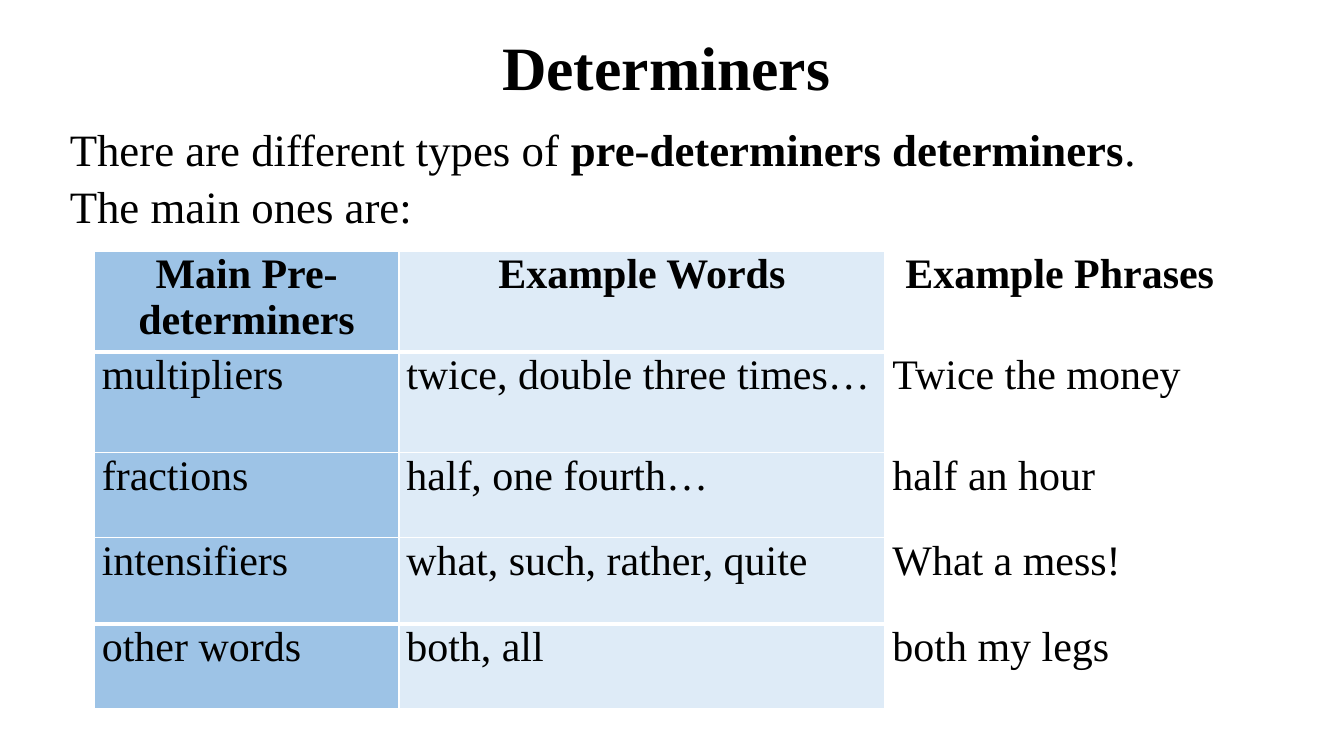
"""Build the Determiners slide with its table of pre-determiners."""
from lxml.etree import SubElement
from pptx import Presentation
from pptx.dml.color import RGBColor
from pptx.enum.text import MSO_ANCHOR, PP_ALIGN
from pptx.oxml.ns import qn
from pptx.util import Pt

PX = 9525
FONT = "Times New Roman"
BLACK = RGBColor(0x00, 0x00, 0x00)
WHITE = RGBColor(0xFF, 0xFF, 0xFF)
BLUE = RGBColor(0x9D, 0xC3, 0xE6)
PALE_BLUE = RGBColor(0xDE, 0xEB, 0xF7)

ROWS = [
    ("Main Pre-determiners", "Example Words", "Example Phrases"),
    ("multipliers", "twice, double three times…", "Twice the money"),
    ("fractions", "half, one fourth…", "half an hour"),
    ("intensifiers", "what, such, rather, quite", "What a mess!"),
    ("other words", "both, all", "both my legs"),
]
COL_WIDTHS = [290, 463, 333]
ROW_HEIGHTS = [96, 96, 81, 82, 81]
COL_FILLS = [BLUE, PALE_BLUE, None]


def add_run(p, text, size, bold=False):
    r = p.add_run()
    r.text = text
    r.font.name = FONT
    r.font.size = Pt(size)
    r.font.bold = bold
    r.font.color.rgb = BLACK


def add_border(cell, side, width):
    ln = SubElement(cell._tc.get_or_add_tcPr(), qn(f"a:{side}"), w=str(Pt(width)))
    fill = SubElement(ln, qn("a:solidFill"))
    SubElement(fill, qn("a:srgbClr"), val=str(WHITE))


prs = Presentation()
prs.slide_width = 1280 * PX
prs.slide_height = 720 * PX
s = prs.slides.add_slide(prs.slide_layouts[6])

tf = s.shapes.add_textbox(90 * PX, 26 * PX, 1104 * PX, 83 * PX).text_frame
tf.word_wrap = True
tf.vertical_anchor = MSO_ANCHOR.MIDDLE
p = tf.paragraphs[0]
p.alignment = PP_ALIGN.CENTER
p.line_spacing = 0.9
add_run(p, "Determiners ", 44, True)

tf = s.shapes.add_textbox(57 * PX, 109 * PX, 1159 * PX, 113 * PX).text_frame
tf.word_wrap = True
p = tf.paragraphs[0]
p.line_spacing = 1.05
add_run(p, "There are different types of ", 32)
add_run(p, "pre-determiners determiners", 32, True)
add_run(p, ".", 32)
p = tf.add_paragraph()
p.line_spacing = 1.05
add_run(p, "The main ones are:", 32)

table = s.shapes.add_table(
    len(ROWS), len(COL_WIDTHS), 90 * PX, 239 * PX,
    sum(COL_WIDTHS) * PX, sum(ROW_HEIGHTS) * PX).table
table.horz_banding = False
for col, width in zip(table.columns, COL_WIDTHS):
    col.width = width * PX
for row, height in zip(table.rows, ROW_HEIGHTS):
    row.height = height * PX

last = len(ROWS) - 1
for i, texts in enumerate(ROWS):
    for j, text in enumerate(texts):
        cell = table.cell(i, j)
        cell.margin_left = cell.margin_right = 7 * PX
        cell.margin_top = cell.margin_bottom = 0
        add_border(cell, "lnL", 1)
        add_border(cell, "lnR", 1)
        add_border(cell, "lnT", 3 if i in (1, last) else 1)
        add_border(cell, "lnB", 3 if i in (0, last - 1) else 1)
        if COL_FILLS[j] is None:
            cell.fill.background()
        else:
            cell.fill.solid()
            cell.fill.fore_color.rgb = COL_FILLS[j]
        p = cell.text_frame.paragraphs[0]
        p.alignment = PP_ALIGN.CENTER if i == 0 else PP_ALIGN.LEFT
        p.space_before = p.space_after = Pt(6)
        add_run(p, text, 30, i == 0)

prs.save("out.pptx")
